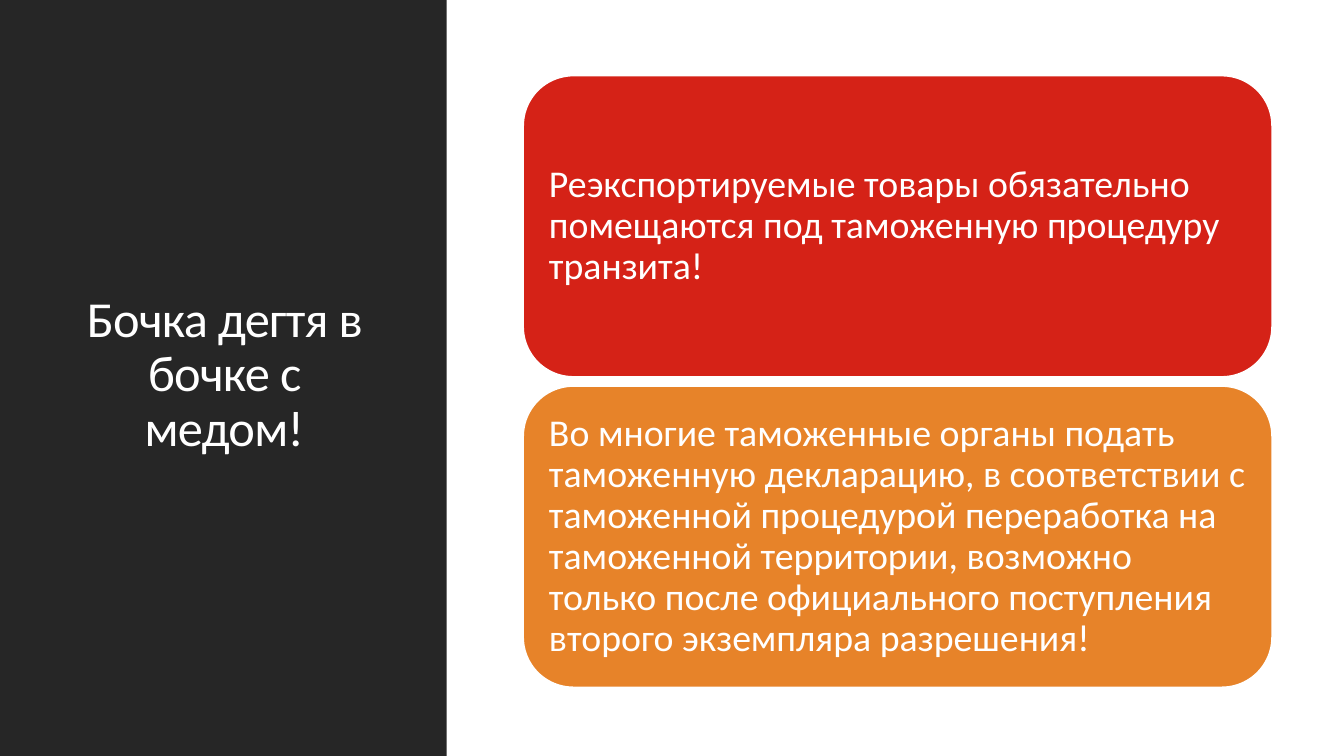
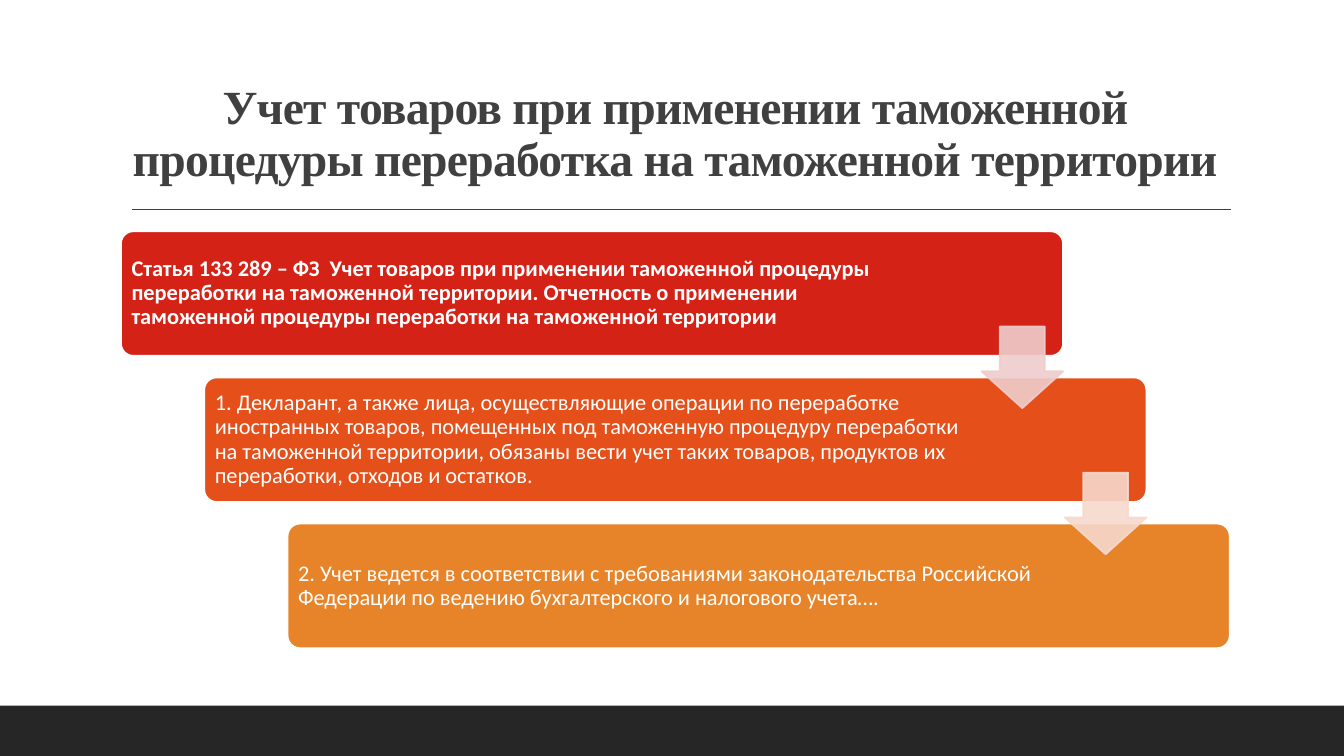
from lxml import etree
from pptx import Presentation
from pptx.dml.color import RGBColor
from pptx.enum import shapes, text
from pptx.oxml import ns
from pptx.util import Pt

SLIDE_WIDTH, SLIDE_HEIGHT = 960, 540
WHITE = RGBColor(0xFF, 0xFF, 0xFF)
DARK = RGBColor(0x26, 0x26, 0x26)
GREY = RGBColor(0x40, 0x40, 0x40)
RED = RGBColor(0xD5, 0x22, 0x17)
VERMILION = RGBColor(0xE5, 0x4F, 0x19)
ORANGE = RGBColor(0xE7, 0x83, 0x29)
PALE_RED = RGBColor(0xEF, 0xCD, 0xCC)
PALE_ORANGE = RGBColor(0xF6, 0xD9, 0xCD)
BODY_FONT = "Calibri"
TITLE_FONT = "Times New Roman"

WARNINGS = [
    ("Реэкспортируемые товары обязательно помещаются под таможенную процедуру транзита!", RED),
    ("Во многие таможенные органы подать таможенную декларацию, в соответствии с таможенной "
     "процедурой переработка на таможенной территории, возможно только после официального "
     "поступления второго экземпляра разрешения!", ORANGE),
]
# Text, fill, right margin, bold
STEPS = [
    ("Статья 133 289 – ФЗ  Учет товаров при применении таможенной процедуры переработки на "
     "таможенной территории. Отчетность о применении таможенной процедуры переработки на "
     "таможенной территории", RED, 96, True),
    ("1. Декларант, а также лица, осуществляющие операции по переработке иностранных товаров, "
     "помещенных под таможенную процедуру переработки на таможенной территории, обязаны вести "
     "учет таких товаров, продуктов их переработки, отходов и остатков.", VERMILION, 122, False),
    ("2. Учет ведется в соответствии с требованиями законодательства Российской Федерации по "
     "ведению бухгалтерского и налогового учета….", ORANGE, 122, False),
]


def add_block(slide, kind, box, fill, line=None):
    """Preset shape with a plain fill and an optional outline."""
    shape = slide.shapes.add_shape(kind, *map(Pt, box))
    shape.shadow.inherit = False
    shape.fill.solid()
    shape.fill.fore_color.rgb = fill
    if line is None:
        shape.line.fill.background()
    else:
        shape.line.color.rgb = line
        shape.line.width = Pt(1.25)
    return shape


def write(shape, words, size, color, font=BODY_FONT, bold=False,
          align=text.PP_ALIGN.LEFT, anchor=text.MSO_ANCHOR.MIDDLE):
    """One paragraph of text in a shape; returns its run."""
    frame = shape.text_frame
    frame.text = words
    frame.word_wrap = True
    frame.vertical_anchor = anchor
    paragraph = frame.paragraphs[0]
    paragraph.alignment = align
    paragraph.line_spacing = 0.9
    run = paragraph.runs[0]
    run.font.name, run.font.size, run.font.bold = font, Pt(size), bold
    run.font.color.rgb = color
    return run


def add_title(slide, box, words, size, color, **style):
    """Centred title with slightly tightened letters."""
    title = slide.shapes.add_textbox(*map(Pt, box))
    run = write(title, words, size, color, align=text.PP_ALIGN.CENTER, **style)
    run._r.get_or_add_rPr().set("spc", "-50")


def add_dark_band(slide, box):
    add_block(slide, shapes.MSO_SHAPE.RECTANGLE, box, DARK)


def add_card(slide, box, words, fill, size, margin, right_margin=None, corner=None, bold=False):
    """Rounded card with white text."""
    card = add_block(slide, shapes.MSO_SHAPE.ROUNDED_RECTANGLE, box, fill, WHITE)
    if corner is not None:
        card.adjustments[0] = corner
    write(card, words, size, WHITE, bold=bold)
    frame = card.text_frame
    frame.margin_left = frame.margin_top = frame.margin_bottom = Pt(margin)
    frame.margin_right = Pt(right_margin or margin)


def add_step_arrow(slide, box, color):
    """Down arrow at 90 % opacity."""
    arrow = add_block(slide, shapes.MSO_SHAPE.DOWN_ARROW, box, color, color)
    arrow.adjustments[0], arrow.adjustments[1] = 0.55, 0.45
    for color_node in arrow._element.spPr.iter(ns.qn("a:srgbClr")):
        etree.SubElement(color_node, ns.qn("a:alpha")).set("val", "90000")


def add_rule(slide, left, top, width):
    rule = slide.shapes.add_connector(
        shapes.MSO_CONNECTOR.STRAIGHT, Pt(left), Pt(top), Pt(left + width), Pt(top))
    rule.line.color.rgb = GREY
    rule.line.width = Pt(1)
    etree.SubElement(rule._element.spPr, ns.qn("a:effectLst"))


def add_card_stack(slide, box, cards):
    """Equal cards one under another, filling the box."""
    left, top, width, height = box
    gap = 6.5
    card_height = (height - gap * (len(cards) - 1)) / len(cards)
    for index, (words, fill) in enumerate(cards):
        card_top = top + index * (card_height + gap)
        add_card(slide, (left, card_top, width, card_height), words, fill, size=27, margin=8)


def add_staircase(slide, box, steps, arrow_colors):
    """Cards stepping down to the right, joined by arrows over the gaps."""
    left, top, width, height = box
    card_width, card_height, arrow_size = 673, 89, 58.3
    step_x = (width - card_width) / (len(steps) - 1)
    step_y = (height - card_height) / (len(steps) - 1)
    for index, (words, fill, right_margin, bold) in enumerate(steps):
        card_box = (left + index * step_x, top + index * step_y, card_width, card_height)
        add_card(slide, card_box, words, fill, 16, 5, right_margin, corner=0.1, bold=bold)
    for index, color in enumerate(arrow_colors):
        arrow_left = left + index * step_x + card_width - arrow_size
        arrow_top = top + index * step_y + 68
        add_step_arrow(slide, (arrow_left, arrow_top, arrow_size, arrow_size), color)


def build_panel_slide(slide):
    add_dark_band(slide, (0, 0, 319, SLIDE_HEIGHT))
    add_title(slide, (39, 41, 242.5, 454.5), "Бочка дегтя в бочке с медом!", 36, WHITE)
    add_card_stack(slide, (373.7, 54, 535, 437), WARNINGS)


def build_steps_slide(slide):
    add_dark_band(slide, (0, 504, SLIDE_WIDTH, 36))
    add_rule(slide, 94.3, 149.5, 784.7)
    add_title(slide, (86.4, 22.3, 792, 114.5),
              "Учет товаров при применении таможенной процедуры переработка на "
              "таможенной территории", 34, GREY,
              font=TITLE_FONT, bold=True, anchor=text.MSO_ANCHOR.BOTTOM)
    add_staircase(slide, (86.4, 165.2, 792, 297.8), STEPS, [PALE_RED, PALE_ORANGE])


def main():
    presentation = Presentation()
    presentation.slide_width, presentation.slide_height = Pt(SLIDE_WIDTH), Pt(SLIDE_HEIGHT)
    blank = presentation.slide_layouts[6]
    for build in (build_panel_slide, build_steps_slide):
        build(presentation.slides.add_slide(blank))
    presentation.save("out.pptx")


if __name__ == "__main__":
    main()
